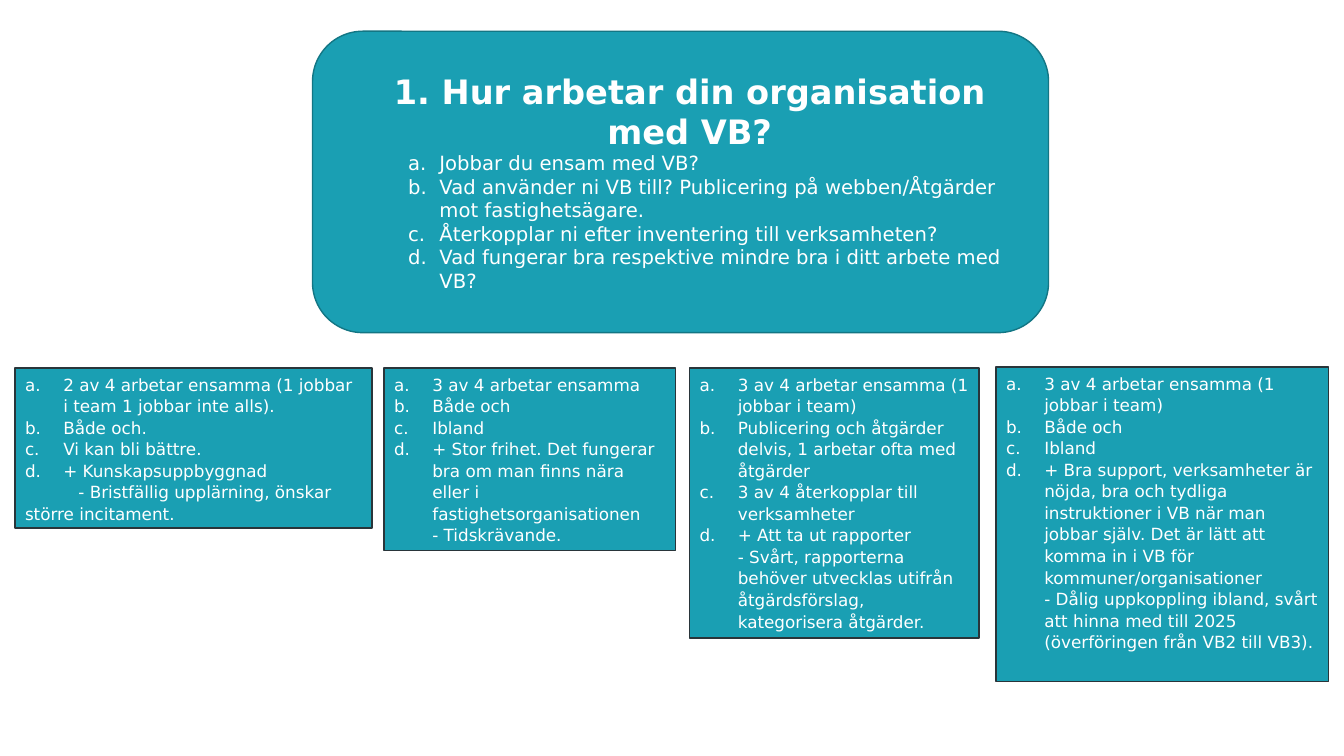
from copy import deepcopy

from lxml.etree import SubElement
from pptx import Presentation
from pptx.dml.color import RGBColor
from pptx.enum.shapes import MSO_SHAPE
from pptx.enum.text import MSO_ANCHOR, PP_ALIGN
from pptx.oxml.ns import qn
from pptx.util import Inches, Pt

COLORS = {"teal": "1A9FB3", "teal_edge": "137684", "dark_edge": "29353A", "white": "FFFFFF"}
FONT = "DejaVu Sans"

QUESTIONS = [
    "Jobbar du ensam med VB?",
    "Vad använder ni VB till? Publicering på webben/Åtgärder mot fastighetsägare.",
    "Återkopplar ni efter inventering till verksamheten?",
    "Vad fungerar bra respektive mindre bra i ditt arbete med VB?",
]

# Left, top, width, height, lettered answers, closing remark
ANSWER_BOXES = [
    (0.15, 3.65, 3.54, 1.59, [
        "2 av 4 arbetar ensamma (1 jobbar i team 1 jobbar inte alls).",
        "Både och.",
        "Vi kan bli bättre.",
        "+ Kunskapsuppbyggnad",
    ], "- Bristfällig upplärning, önskar större incitament."),
    (3.81, 3.65, 2.89, 1.81, [
        "3 av 4 arbetar ensamma",
        "Både och",
        "Ibland",
        "+ Stor frihet. Det fungerar bra om man finns nära eller i "
        "fastighetsorganisationen\n- Tidskrävande.",
    ], None),
    (6.84, 3.65, 2.87, 2.68, [
        "3 av 4 arbetar ensamma (1 jobbar i team)",
        "Publicering och åtgärder delvis, 1 arbetar ofta med åtgärder",
        "3 av 4 återkopplar till verksamheter",
        "+ Att ta ut rapporter\n- Svårt, rapporterna behöver utvecklas utifrån "
        "åtgärdsförslag, kategorisera åtgärder.",
    ], None),
    (9.88, 3.64, 3.3, 3.12, [
        "3 av 4 arbetar ensamma (1 jobbar i team)",
        "Både och",
        "Ibland",
        "+ Bra support, verksamheter är nöjda, bra och tydliga instruktioner i VB "
        "när man jobbar själv. Det är lätt att komma in i VB för "
        "kommuner/organisationer\n- Dålig uppkoppling ibland, svårt att hinna med "
        "till 2025 (överföringen från VB2 till VB3).",
    ], None),
]


def write(frame, text, size=12, bold=False, align=PP_ALIGN.LEFT, spacing=1.0,
          margin=0, indent=0, lettered=False):
    """Add one formatted paragraph, using the empty first one if there is one."""
    first = frame.paragraphs[0]
    paragraph = frame.add_paragraph() if first.runs else first
    paragraph.text = text
    paragraph.alignment = align
    paragraph.line_spacing = spacing
    for run in paragraph.runs:
        run.font.name = FONT
        run.font.size = Pt(size)
        run.font.bold = bold
        run.font.color.rgb = RGBColor.from_string(COLORS["white"])
    # Line breaks take the format of the text around them
    for line_break in paragraph._p.findall(qn("a:br")):
        line_break.append(deepcopy(paragraph.runs[0]._r.rPr))
    properties = paragraph._p.get_or_add_pPr()
    properties.set("marL", str(Inches(margin)))
    properties.set("indent", str(Inches(indent)))
    if lettered:
        SubElement(properties, qn("a:buFont"), typeface="+mj-lt")
        SubElement(properties, qn("a:buAutoNum"), type="alphaLcPeriod")
    else:
        SubElement(properties, qn("a:buNone"))


class SlideBuilder:
    def __init__(self, slide):
        self.slide = slide

    def box(self, kind, left, top, width, height, edge):
        shape = self.slide.shapes.add_shape(
            kind, Inches(left), Inches(top), Inches(width), Inches(height))
        shape.shadow.inherit = False
        shape.fill.solid()
        shape.fill.fore_color.rgb = RGBColor.from_string(COLORS["teal"])
        shape.line.color.rgb = RGBColor.from_string(COLORS[edge])
        shape.line.width = Pt(1)
        return shape

    def question_text(self, left, top, width, height, heading, questions):
        shape = self.slide.shapes.add_textbox(
            Inches(left), Inches(top), Inches(width), Inches(height))
        frame = shape.text_frame
        frame.word_wrap = True
        frame.vertical_anchor = MSO_ANCHOR.MIDDLE
        write(frame, heading, size=24, bold=True, align=PP_ALIGN.CENTER)
        for question in questions:
            write(frame, question, size=14, margin=0.81, indent=-0.31, lettered=True)

    def answer_box(self, left, top, width, height, answers, remark):
        shape = self.box(MSO_SHAPE.RECTANGLE, left, top, width, height, "dark_edge")
        frame = shape.text_frame
        frame.word_wrap = True
        frame.vertical_anchor = MSO_ANCHOR.TOP
        for answer in answers:
            write(frame, answer, spacing=1.07, margin=0.38, indent=-0.38, lettered=True)
        if remark:
            write(frame, remark, spacing=1.07, indent=0.53)


def main():
    presentation = Presentation()
    presentation.slide_width = Inches(13.33)
    presentation.slide_height = Inches(7.5)
    slide = presentation.slides.add_slide(presentation.slide_layouts[6])
    builder = SlideBuilder(slide)

    # Question panel
    builder.box(MSO_SHAPE.ROUNDED_RECTANGLE, 3.1, 0.31, 7.3, 2.99, "teal_edge")
    builder.question_text(3.45, 0.64, 6.78, 2.32,
                          "1. Hur arbetar din organisation med VB?", QUESTIONS)

    # Answers from the four groups
    for answer_box in ANSWER_BOXES:
        builder.answer_box(*answer_box)

    presentation.save("out.pptx")


if __name__ == "__main__":
    main()
